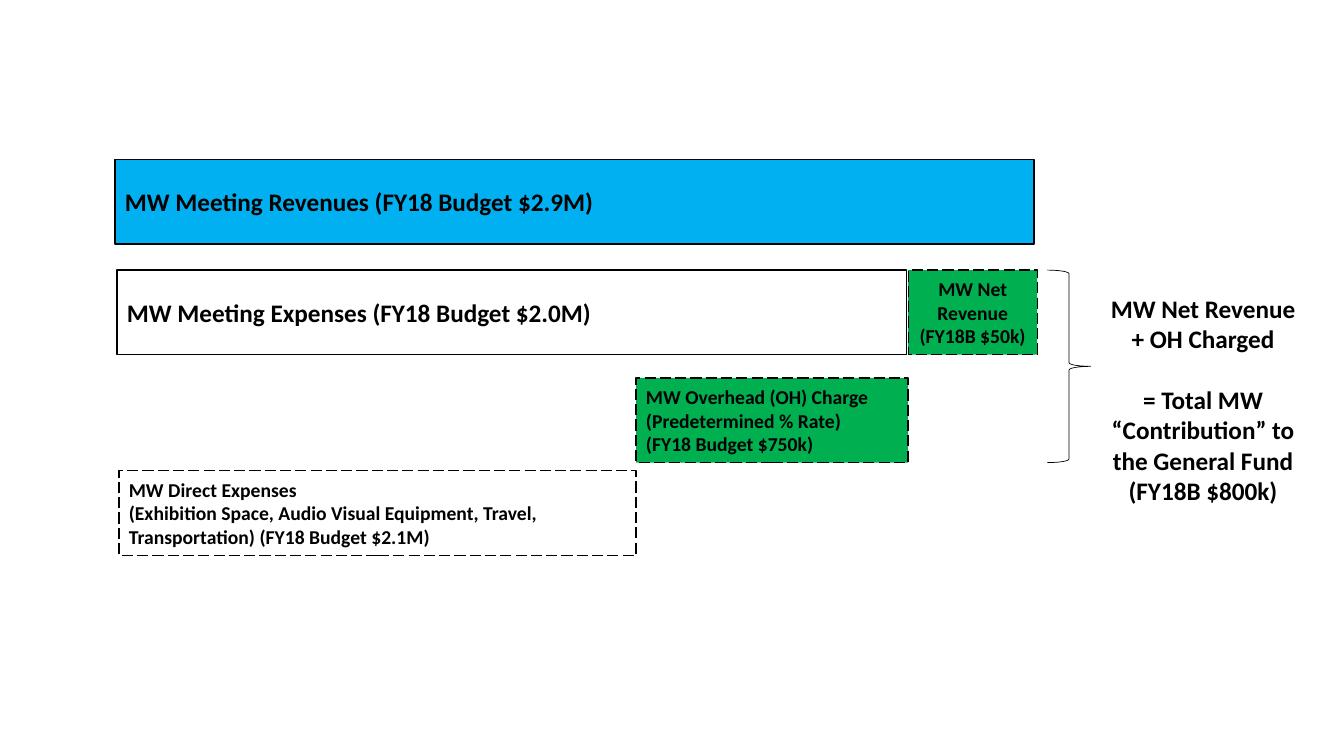
"""Build the slide that splits meeting revenues into expenses, overhead and net revenue."""
from dataclasses import dataclass

from pptx import Presentation
from pptx.dml.color import RGBColor
from pptx.enum.dml import MSO_LINE
from pptx.enum.shapes import MSO_SHAPE
from pptx.enum.text import MSO_ANCHOR, MSO_AUTO_SIZE, PP_ALIGN
from pptx.util import Inches, Pt

RECTANGLE = MSO_SHAPE.RECTANGLE
RIGHT_BRACE = MSO_SHAPE.RIGHT_BRACE
LONG_DASH = MSO_LINE.LONG_DASH
MIDDLE = MSO_ANCHOR.MIDDLE
GROW = MSO_AUTO_SIZE.SHAPE_TO_FIT_TEXT
LEFT, CENTER = PP_ALIGN.LEFT, PP_ALIGN.CENTER

COLORS = {"ink": "000000", "revenue": "00B0F0", "contribution": "00B050"}
FONT = "Calibri"
SLIDE_WIDTH, SLIDE_HEIGHT = Inches(13.33), Inches(7.5)
BAR_HEIGHT = 11.2
REVENUE_ROW, EXPENSE_ROW, OVERHEAD_ROW, DIRECT_ROW = 21.07, 35.73, 50, 62.27
BLANK_LAYOUT = 6


@dataclass(frozen=True)
class Bar:
    """A budget bar, placed in percent of the slide's size."""
    left: float
    top: float
    width: float
    lines: tuple[str, ...]
    size: int = 14
    fill: str | None = None
    dashed: bool = True
    align: PP_ALIGN = LEFT


BARS = (
    Bar(8.55, REVENUE_ROW, 68.4, ("MW Meeting Revenues (FY18 Budget $2.9M)",),
        size=18, fill="revenue", dashed=False),
    Bar(8.7, EXPENSE_ROW, 58.73, ("MW Meeting Expenses (FY18 Budget $2.0M)",),
        size=18, dashed=False),
    Bar(47.33, OVERHEAD_ROW, 20.25,
        ("MW Overhead (OH) Charge", "(Predetermined % Rate)", "(FY18 Budget $750k)"),
        fill="contribution"),
    Bar(67.58, EXPENSE_ROW, 9.6, ("MW Net Revenue", "(FY18B $50k)"),
        fill="contribution", align=CENTER),
    Bar(8.85, DIRECT_ROW, 38.48,
        ("MW Direct Expenses",
         "(Exhibition Space, Audio Visual Equipment, Travel, Transportation) "
         "(FY18 Budget $2.1M)")),
)
SUMMARY = ("MW Net Revenue", "+ OH Charged",
           "= Total MW “Contribution” to the General Fund", "(FY18B $800k)")


def color(name: str) -> RGBColor:
    """Return the named palette colour."""
    return RGBColor.from_string(COLORS[name])


def place(left: float, top: float, width: float, height: float) -> tuple[int, ...]:
    """Turn percentages of the slide into lengths."""
    sides = (SLIDE_WIDTH, SLIDE_HEIGHT) * 2
    return tuple(round(side * share / 100)
                 for side, share in zip(sides, (left, top, width, height)))


def write(box, lines: tuple[str, ...], *, size: int, align: PP_ALIGN) -> None:
    """Write bold paragraphs into a box."""
    frame = box.text_frame
    frame.word_wrap = True
    frame.text = "\n".join(lines)
    for para in frame.paragraphs:
        para.alignment = align
        para.font.name = FONT
        para.font.size = Pt(size)
        para.font.bold = True
        para.font.color.rgb = color("ink")


def draw_outline(page, kind: MSO_SHAPE, area: tuple[int, ...], *,
                 fill: str | None = None, weight: float = 1, dashed: bool = False):
    """Draw a preset shape with a black outline."""
    shape = page.shapes.add_shape(kind, *area)
    shape.shadow.inherit = False
    if fill:
        shape.fill.solid()
        shape.fill.fore_color.rgb = color(fill)
    else:
        shape.fill.background()
    shape.line.color.rgb = color("ink")
    shape.line.width = Pt(weight)
    if dashed:
        shape.line.dash_style = LONG_DASH
    return shape


def draw_bar(page, bar: Bar) -> None:
    """Draw one labelled budget bar."""
    box = draw_outline(page, RECTANGLE, place(bar.left, bar.top, bar.width, BAR_HEIGHT),
                       fill=bar.fill, dashed=bar.dashed)
    box.text_frame.vertical_anchor = MIDDLE
    write(box, bar.lines, size=bar.size, align=bar.align)


def draw_summary(page) -> None:
    """Draw the brace and the total beside it."""
    span = OVERHEAD_ROW + BAR_HEIGHT - EXPENSE_ROW
    draw_outline(page, RIGHT_BRACE, place(77.93, EXPENSE_ROW, 3.23, span), weight=0.5)
    box = page.shapes.add_textbox(*place(81.75, 38.13, 15.53, 29.6))
    write(box, SUMMARY, size=18, align=CENTER)
    box.text_frame.auto_size = GROW
    box.text_frame.paragraphs[2].space_before = Pt(22)


def main() -> None:
    """Build and save the deck."""
    deck = Presentation()
    deck.slide_width, deck.slide_height = SLIDE_WIDTH, SLIDE_HEIGHT
    page = deck.slides.add_slide(deck.slide_layouts[BLANK_LAYOUT])
    for bar in BARS:
        draw_bar(page, bar)
    draw_summary(page)
    deck.save("out.pptx")


if __name__ == "__main__":
    main()
